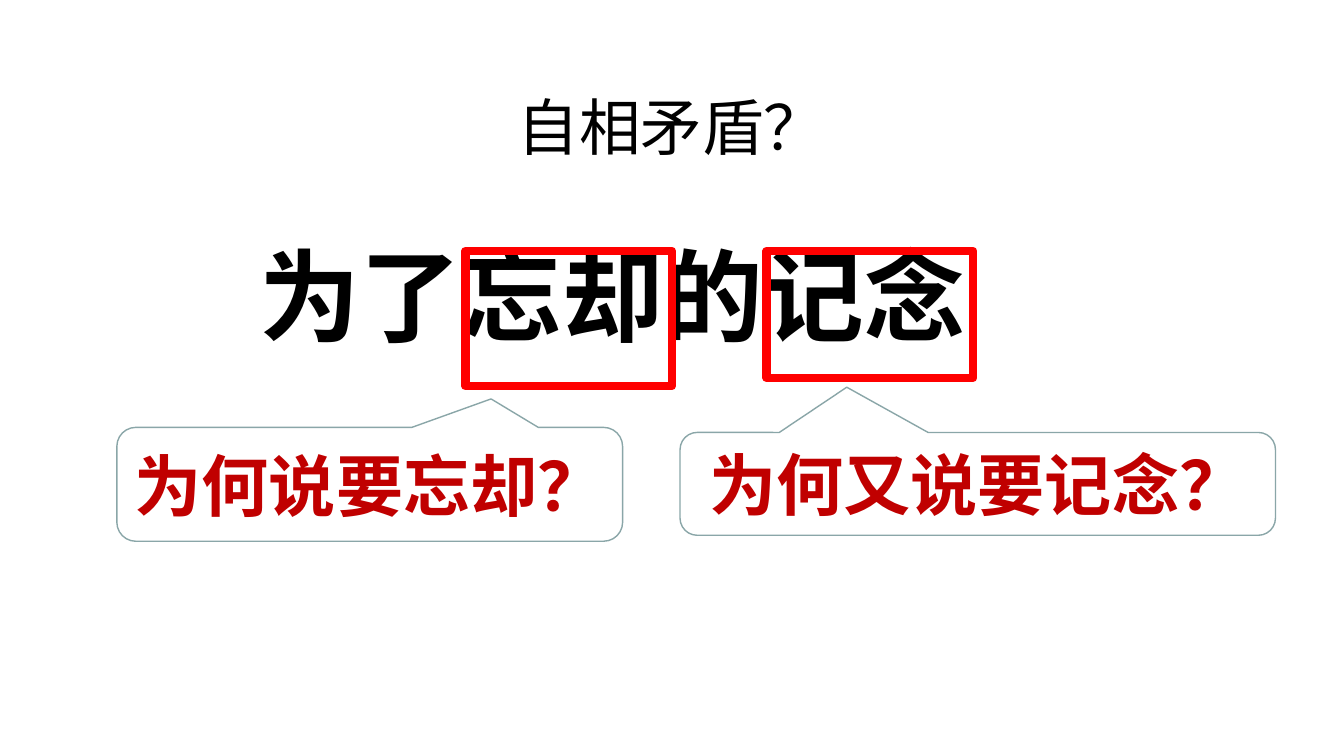
from pptx import Presentation
from pptx.dml.color import RGBColor
from pptx.enum import shapes, text
from pptx.oxml import ns
from pptx.util import Inches, Pt

BLACK = RGBColor(0x00, 0x00, 0x00)
RED = RGBColor(0xFF, 0x00, 0x00)
DARK_RED = RGBColor(0xC0, 0x00, 0x00)
GREY_GREEN = RGBColor(0x8A, 0xA6, 0xA8)


class SlideBuilder:
    font = "Noto Sans CJK SC"

    def __init__(self, s):
        self.s = s

    def add_words(self, tf, words, size, color, bold):
        p = tf.paragraphs[0]
        p.alignment = text.PP_ALIGN.CENTER
        r = p.add_run()
        r.text = words
        r.font.name = self.font
        r.font.size = Pt(size)
        r.font.bold = bold
        r.font.color.rgb = color
        ea = r.font._element.makeelement(ns.qn("a:ea"), {"typeface": self.font})
        r.font._element.find(ns.qn("a:latin")).addnext(ea)
        return p

    def heading(self, box, words, size, bold=False):
        sp = self.s.shapes.add_textbox(*map(Inches, box))
        tf = sp.text_frame
        tf.word_wrap = True
        p = self.add_words(tf, words, size, BLACK, bold)
        p.line_spacing = 0.9

    def outline(self, kind, box, color, width):
        sp = self.s.shapes.add_shape(kind, *map(Inches, box))
        sp.shadow.inherit = False
        sp.fill.background()
        sp.line.color.rgb = color
        sp.line.width = Pt(width)
        return sp

    def frame(self, box):
        self.outline(shapes.MSO_SHAPE.RECTANGLE, box, RED, 6)

    def callout(self, box, tip, words):
        sp = self.outline(shapes.MSO_SHAPE.ROUNDED_RECTANGULAR_CALLOUT, box, GREY_GREEN, 1)
        sp.adjustments[0], sp.adjustments[1] = tip
        tf = sp.text_frame
        tf.word_wrap = False
        tf.vertical_anchor = text.MSO_ANCHOR.MIDDLE
        self.add_words(tf, words, 48, DARK_RED, True)


def main():
    prs = Presentation()
    prs.slide_width, prs.slide_height = Inches(13.34), Inches(7.5)
    slide = SlideBuilder(prs.slides.add_slide(prs.slide_layouts[6]))

    slide.heading((1.79, 2.41, 8.58, 1.73), "为了忘却的记念", 72, bold=True)
    slide.frame((7.61, 2.49, 2.05, 1.26))
    slide.callout((1.16, 4.24, 5.02, 1.13), (0.24, -0.75), "为何说要忘却？")
    slide.callout((6.75, 4.29, 5.91, 1.02), (-0.22, -0.94), "为何又说要记念？")
    slide.frame((4.62, 2.49, 2.05, 1.34))
    slide.heading((4.54, 0.92, 4.25, 0.84), "自相矛盾？", 44)

    prs.save("out.pptx")


if __name__ == "__main__":
    main()
